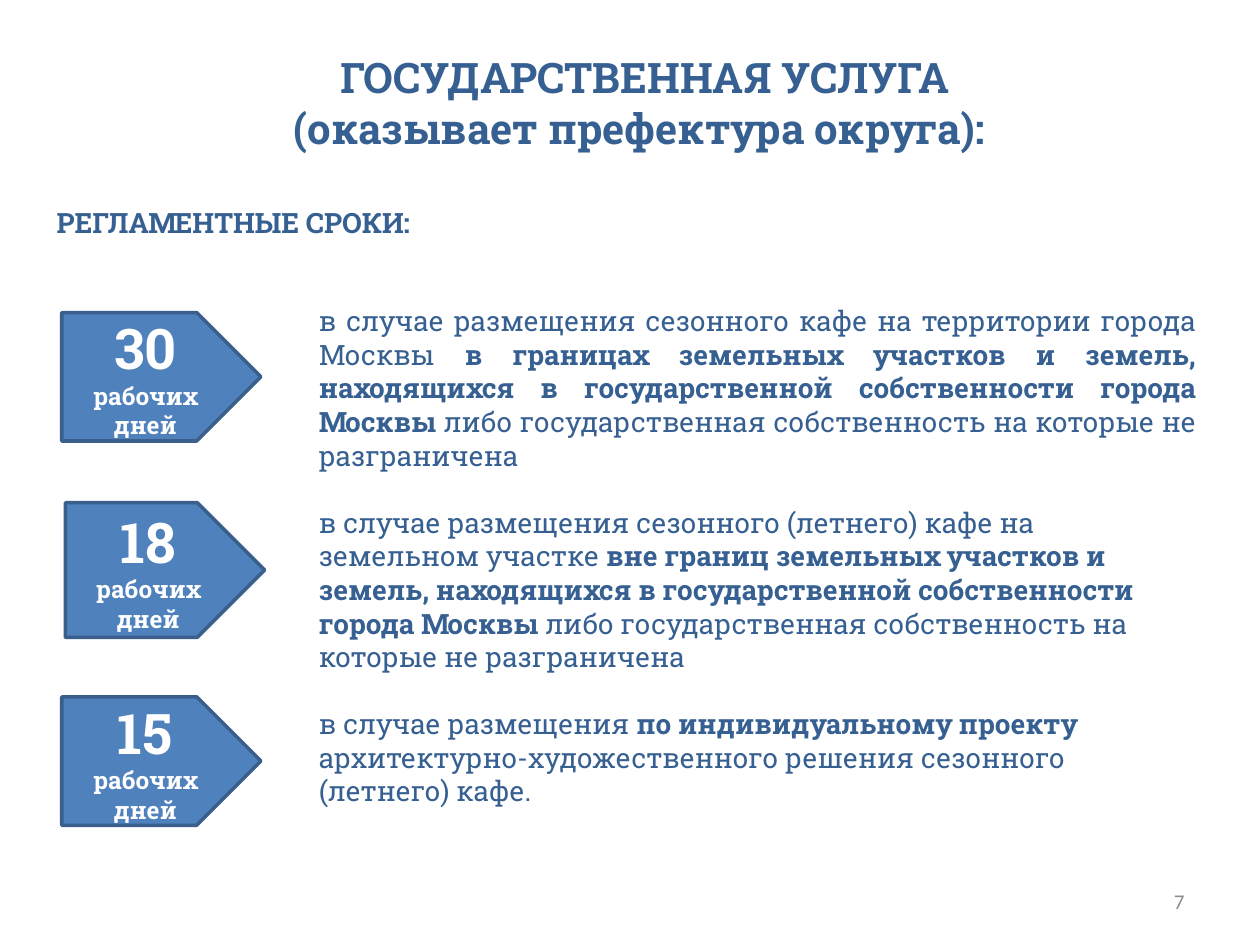
import pptx
import pptx.util
import pptx.dml.color
import pptx.enum.shapes
import pptx.enum.text
from lxml import etree

Pt = pptx.util.Pt
ALIGN = pptx.enum.text.PP_ALIGN
ANCHOR = pptx.enum.text.MSO_ANCHOR

COLORS = {
    "text": "376092",
    "arrow": "4F81BD",
    "outline": "3A5F8C",
    "white": "FFFFFF",
    "number": "8C8C8C",
}
FONT = "Roboto Slab"

CASES = [
    [("в случае размещения сезонного кафе на территории города Москвы ", False),
     ("в границах земельных участков и земель, находящихся в государственной "
      "собственности города Москвы ", True),
     ("либо государственная собственность на которые не разграничена", False)],
    [("в случае размещения сезонного (летнего) кафе на земельном участке ", False),
     ("вне границ земельных участков и земель, находящихся в государственной "
      "собственности города Москвы", True),
     (" либо государственная собственность на которые не разграничена", False)],
    [("в случае размещения ", False),
     ("по индивидуальному проекту ", True),
     ("архитектурно-художественного решения сезонного (летнего) кафе.", False)],
]

# Days and box (left, top, width, height) of each arrow
DEADLINES = [
    ("30", (35.3, 178.6, 113.8, 73.4)),
    ("18", (37.4, 287.3, 113.8, 77)),
    ("15", (35.3, 398.2, 113.8, 73.4)),
]


def rgb(name):
    return pptx.dml.color.RGBColor.from_string(COLORS[name])


def place(shape, box):
    shape.left, shape.top, shape.width, shape.height = map(Pt, box)


def add_run(paragraph, text, size, color="text", bold=False, font=FONT):
    run = paragraph.add_run()
    run.text = text
    run.font.name = font
    run.font.size = Pt(size)
    run.font.bold = bold
    run.font.color.rgb = rgb(color)


def prepare_frame(shape, anchor=ANCHOR.TOP):
    frame = shape.text_frame
    frame.word_wrap = True
    frame.auto_size = pptx.enum.text.MSO_AUTO_SIZE.NONE
    frame.vertical_anchor = anchor
    return frame


def fill_title(slide, box):
    title = slide.shapes.title
    place(title, box)
    frame = prepare_frame(title)
    frame.text = "ГОСУДАРСТВЕННАЯ УСЛУГА\n(оказывает префектура округа): "
    for paragraph in frame.paragraphs:
        paragraph.alignment = ALIGN.CENTER
        for run in paragraph.runs:
            run.font.name = FONT
            run.font.size = Pt(24)
            run.font.bold = True
            run.font.color.rgb = rgb("text")


def fill_cases(slide, box):
    body = slide.placeholders[1]
    place(body, box)
    frame = prepare_frame(body)
    for index, pieces in enumerate(CASES):
        paragraph = frame.paragraphs[0] if index == 0 else frame.add_paragraph()
        paragraph.alignment = ALIGN.LEFT if index else ALIGN.JUSTIFY
        paragraph.space_before = Pt(19.2 if index else 0)
        # No bullet and no hanging indent
        properties = paragraph._p.get_or_add_pPr()
        properties.set("marL", "0")
        properties.set("indent", "0")
        etree.SubElement(properties, pptx.oxml.ns.qn("a:buNone"))
        for text, bold in pieces:
            add_run(paragraph, text, 16, bold=bold)


def add_label(slide, box, text, size, color="text", bold=False, font=FONT,
              align=ALIGN.LEFT, anchor=ANCHOR.TOP):
    label = slide.shapes.add_textbox(*map(Pt, box))
    paragraph = prepare_frame(label, anchor).paragraphs[0]
    paragraph.alignment = align
    add_run(paragraph, text, size, color, bold, font)


def add_deadline(slide, box, days):
    arrow = slide.shapes.add_shape(
        pptx.enum.shapes.MSO_SHAPE.PENTAGON, *map(Pt, box))
    arrow.shadow.inherit = False
    arrow.fill.solid()
    arrow.fill.fore_color.rgb = rgb("arrow")
    arrow.line.color.rgb = rgb("outline")
    arrow.line.width = Pt(2)
    paragraph = prepare_frame(arrow, ANCHOR.MIDDLE).paragraphs[0]
    paragraph.alignment = ALIGN.CENTER
    for text, size in ((days, 32), (" ", 18), ("рабочих дней", 14)):
        add_run(paragraph, text, size, "white", bold=True)


def main():
    presentation = pptx.Presentation()
    presentation.slide_width = Pt(720)
    presentation.slide_height = Pt(540)
    slide = presentation.slides.add_slide(presentation.slide_layouts[1])

    # Heading and cases
    fill_title(slide, (35.3, 26, 666, 65.5))
    fill_cases(slide, (175, 170, 516, 316))

    # Section label and page number
    add_label(slide, (25.2, 113.7, 237, 27), "РЕГЛАМЕНТНЫЕ СРОКИ:", 16, bold=True)
    add_label(slide, (516, 500.5, 168, 28.8), "7", 12, "number", font="Calibri",
              align=ALIGN.RIGHT, anchor=ANCHOR.MIDDLE)

    # Deadline arrows
    for days, box in DEADLINES:
        add_deadline(slide, box, days)

    presentation.save("out.pptx")


if __name__ == "__main__":
    main()
